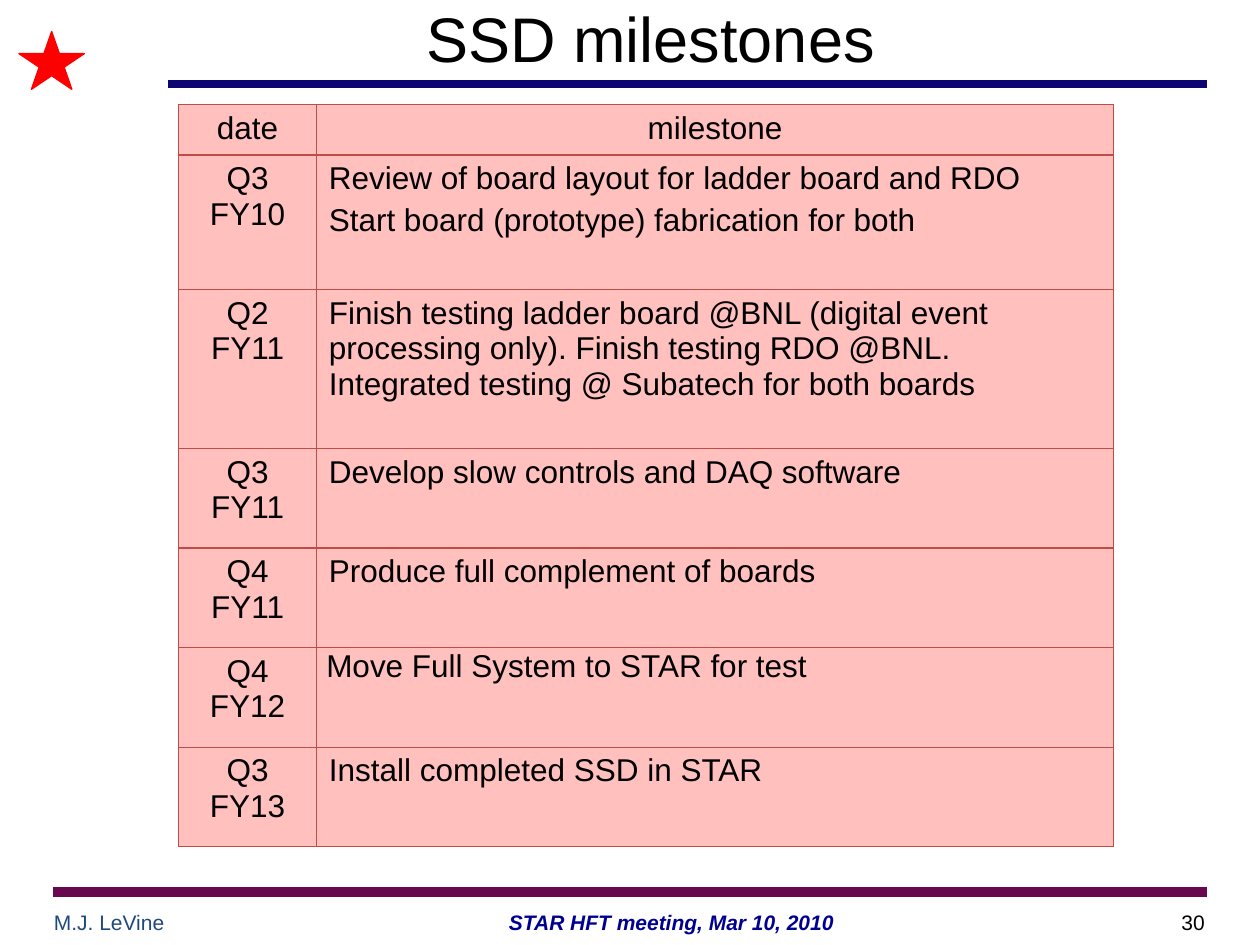
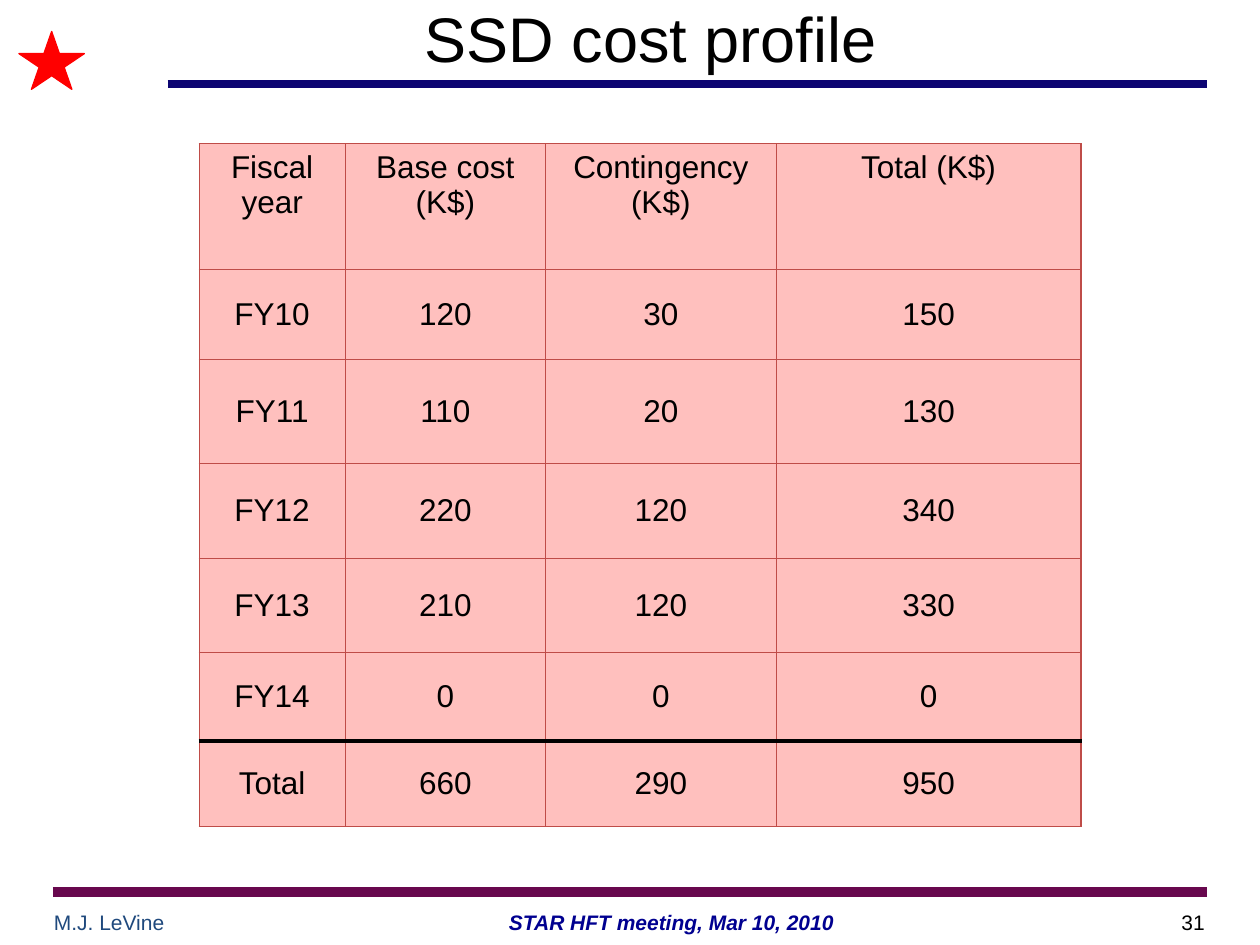
from dataclasses import dataclass

from lxml.etree import SubElement
from pptx import Presentation
from pptx.dml.color import RGBColor
from pptx.enum.shapes import MSO_CONNECTOR as Connector, MSO_SHAPE as Shape
from pptx.enum.text import MSO_ANCHOR as Anchor, PP_ALIGN as Align
from pptx.oxml.ns import qn
from pptx.util import Inches, Pt


@dataclass(frozen=True)
class Theme:
    font: str = "Arial"
    ink: str = "000000"
    navy: str = "0C0572"
    plum: str = "68084E"
    red: str = "FF0000"
    author: str = "1F497D"
    meeting: str = "000090"
    cell: str = "FFC0BE"
    grid: str = "BF4C48"
    title_size: float = 36
    table_size: float = 18
    footer_size: float = 12
    thin: float = 0.75
    thick: float = 2.25


THEME = Theme()


def write(frame, text, size=THEME.table_size, color=THEME.ink, bold=False,
          italic=False, align=Align.LEFT, gap=0):
    """Fill a text frame, one paragraph per line of text."""
    for index, line in enumerate(text.split("\n")):
        para = frame.add_paragraph() if index else frame.paragraphs[0]
        para.alignment = align
        if index:
            para.space_before = Pt(gap)
        span = para.add_run()
        span.text = line
        span.font.name = THEME.font
        span.font.size = Pt(size)
        span.font.bold = bold
        span.font.italic = italic
        span.font.color.rgb = RGBColor.from_string(color)


def add_border(cell, side, color, width):
    line = SubElement(cell._tc.get_or_add_tcPr(), qn(f"a:ln{side}"), w=str(Pt(width)))
    fill = SubElement(line, qn("a:solidFill"))
    SubElement(fill, qn("a:srgbClr"), val=color)


class SlideMaker:
    def __init__(self, deck, theme):
        self.deck = deck
        self.theme = theme
        self.page = None

    def start(self, title, number):
        """Add a page with its title, bands and footer."""
        theme = self.theme
        self.page = self.deck.slides.add_slide(self.deck.slide_layouts[6])
        # Footer
        footer = {"size": theme.footer_size}
        self.text("M.J. LeVine", 0.33, 7.17, 1.17, 0.25, color=theme.author, **footer)
        self.band(0.42, 7.08, theme.plum, 6)
        self.text(str(number), 7.58, 7.17, 2.08, 0.25, align=Align.RIGHT, **footer)
        self.text("STAR HFT meeting, Mar 10, 2010", 2.08, 7.17, 6.5, 0.3,
                  color=theme.meeting, bold=True, italic=True,
                  align=Align.CENTER, **footer)
        # Header
        self.star(0.15, 0.25, 0.52, 0.46)
        self.band(1.33, 0.67, theme.navy, 4.5)
        self.text(title, 0.58, -0.33, 9.17, 1.25, anchor=Anchor.MIDDLE,
                  size=theme.title_size, align=Align.CENTER)

    def text(self, text, left, top, width, height, anchor=Anchor.TOP, **style):
        box = self.page.shapes.add_textbox(
            Inches(left), Inches(top), Inches(width), Inches(height))
        box.text_frame.word_wrap = True
        box.text_frame.vertical_anchor = anchor
        write(box.text_frame, text, **style)

    def band(self, left, top, color, width, right=9.58):
        band = self.page.shapes.add_connector(
            Connector.STRAIGHT, Inches(left), Inches(top), Inches(right), Inches(top))
        band.line.color.rgb = RGBColor.from_string(color)
        band.line.width = Pt(width)
        SubElement(band._element.spPr, qn("a:effectLst"))

    def star(self, left, top, width, height):
        star = self.page.shapes.add_shape(
            Shape.STAR_5_POINT, Inches(left), Inches(top), Inches(width), Inches(height))
        star.shadow.inherit = False
        star.fill.solid()
        star.fill.fore_color.rgb = RGBColor.from_string(self.theme.red)
        star.line.color.rgb = RGBColor.from_string(self.theme.red)
        star.line.width = Pt(self.theme.thin)

    def table(self, rows, left, top, widths, heights, left_columns=(),
              middle_body=False, total_row=None):
        """Add a ruled table; a thick rule runs above total_row."""
        theme = self.theme
        table = self.page.shapes.add_table(
            len(rows), len(widths), Inches(left), Inches(top),
            Inches(sum(widths)), Inches(sum(heights))).table
        table.first_row = table.horz_banding = False
        for column, width in zip(table.columns, widths):
            column.width = Inches(width)
        for r, (values, height) in enumerate(zip(rows, heights)):
            table.rows[r].height = Inches(height)
            for c, value in enumerate(values):
                cell = table.cell(r, c)
                thick_sides = {total_row: "T"}.get(r) or {total_row: "B"}.get(r + 1)
                for side in "LRTB":
                    thick = side == thick_sides
                    add_border(cell, side, theme.ink if thick else theme.grid,
                               theme.thick if thick else theme.thin)
                cell.fill.solid()
                cell.fill.fore_color.rgb = RGBColor.from_string(theme.cell)
                if middle_body and r:
                    cell.vertical_anchor = Anchor.MIDDLE
                is_left = r and c in left_columns
                write(cell.text_frame, str(value), gap=3.6,
                      align=Align.LEFT if is_left else Align.CENTER)
        return table


def add_milestones(maker):
    maker.start("SSD milestones", 30)
    rows = [
        ("date", "milestone"),
        ("Q3 FY10", "Review of board layout for ladder board and RDO\n"
                    "Start board (prototype) fabrication for both"),
        ("Q2 FY11", "Finish testing ladder board @BNL (digital event processing only). "
                    "Finish testing RDO @BNL. "
                    "Integrated testing @ Subatech for both boards"),
        ("Q3 FY11", "Develop slow controls and DAQ software"),
        ("Q4 FY11", "Produce full complement of boards"),
        ("Q4 FY12", "Move Full System to STAR for test"),
        ("Q3 FY13", "Install completed SSD in STAR"),
    ]
    table = maker.table(rows, 1.42, 0.83, [1.09, 6.33],
                        [0.38, 1.07, 1.26] + [0.79] * 4, left_columns=(1,))
    # The system test entry sits tight against the top of its cell
    system_test = table.cell(5, 1)
    system_test.margin_left = Inches(0.08)
    system_test.margin_top = Inches(0.01)


def add_cost_profile(maker):
    maker.start("SSD cost profile", 31)
    costs = [("FY10", 120, 30), ("FY11", 110, 20), ("FY12", 220, 120),
             ("FY13", 210, 120), ("FY14", 0, 0)]
    costs.append(("Total", sum(cost[1] for cost in costs), sum(cost[2] for cost in costs)))
    rows = [("Fiscal year", "Base cost (K$)", "Contingency (K$)", "Total (K$)")]
    rows += [(year, base, extra, base + extra) for year, base, extra in costs]
    maker.table(rows, 1.58, 1.14, [1.16, 1.59, 1.83, 2.42],
                [1, 0.71, 0.83, 0.75, 0.75, 0.7, 0.68],
                middle_body=True, total_row=len(rows) - 1)


def main():
    deck = Presentation()
    deck.slide_width, deck.slide_height = Inches(10), Inches(7.5)
    maker = SlideMaker(deck, THEME)
    add_milestones(maker)
    add_cost_profile(maker)
    deck.save("out.pptx")


if __name__ == "__main__":
    main()
